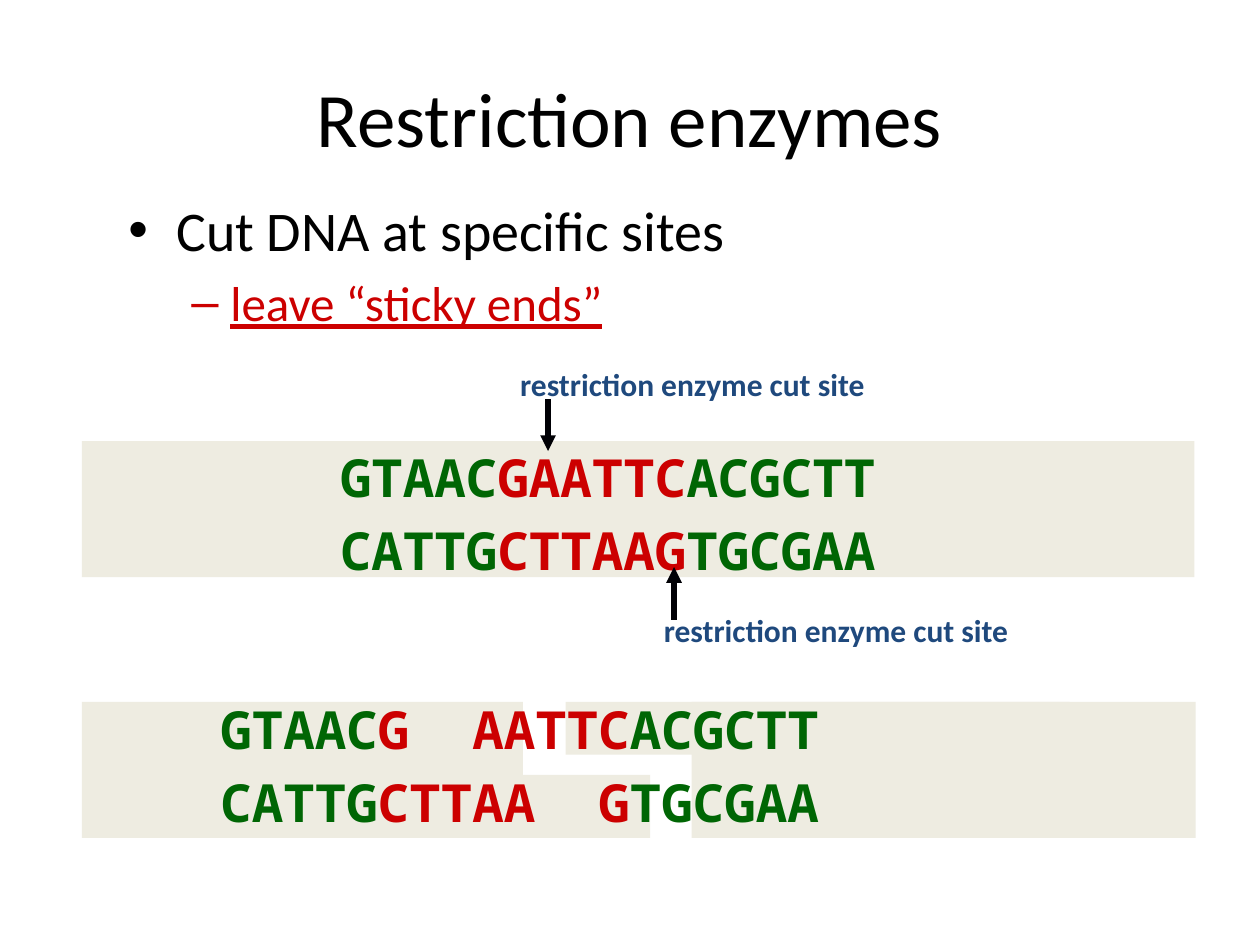
from dataclasses import dataclass

from lxml.etree import SubElement
from pptx import Presentation
from pptx.dml.color import RGBColor
from pptx.enum.shapes import MSO_CONNECTOR as Connector, MSO_SHAPE as Shape
from pptx.enum.text import MSO_ANCHOR as Anchor, PP_ALIGN as Align
from pptx.oxml.ns import qn
from pptx.util import Inches, Pt


@dataclass(frozen=True)
class Theme:
    text_font: str = "Calibri"
    sequence_font: str = "Noto Sans Mono"
    black: str = "000000"
    arrow: str = "000005"
    red: str = "CC0000"
    green: str = "006604"
    blue: str = "1F497D"
    band: str = "EEECE1"
    title_size: int = 44
    body_size: int = 32
    sub_size: int = 28
    sequence_size: int = 30
    label_size: int = 18


THEME = Theme()


def color(value):
    return RGBColor.from_string(value)


def set_font(paragraph, size, name=THEME.text_font, fill=None, bold=False):
    font = paragraph.font
    font.size, font.name, font.bold = Pt(size), name, bold
    if fill:
        font.color.rgb = color(fill)


def add_text_frame(shapes, box, anchor=Anchor.MIDDLE):
    shape = shapes.add_textbox(*map(Inches, box))
    frame = shape.text_frame
    frame.word_wrap = True
    frame.vertical_anchor = anchor
    return frame


def add_title(shapes, text):
    paragraph = add_text_frame(shapes, (0.5, 0.3, 9, 1.25)).paragraphs[0]
    paragraph.text = text
    paragraph.alignment = Align.CENTER
    set_font(paragraph, THEME.title_size, fill=THEME.black)


def format_bullet(paragraph, level, mark, margin, hanging, size, fill):
    paragraph.level = level
    paragraph.space_before = Pt(size * 0.2)
    properties = paragraph._p.get_or_add_pPr()
    properties.set("marL", str(Inches(margin)))
    properties.set("indent", str(-Inches(hanging)))
    bullet_color = SubElement(properties, qn("a:buClr"))
    SubElement(bullet_color, qn("a:srgbClr"), val=fill)
    SubElement(properties, qn("a:buFont"), typeface="Arial")
    SubElement(properties, qn("a:buChar"), char=mark)
    set_font(paragraph, size, fill=fill)


def add_body(shapes, point, detail):
    frame = add_text_frame(shapes, (0.92, 1.5, 8.5, 1.55), Anchor.TOP)
    first, second = frame.paragraphs[0], frame.add_paragraph()
    first.text, second.text = point, detail
    format_bullet(first, 0, "•", 0.38, 0.38, THEME.body_size, THEME.black)
    format_bullet(second, 1, "–", 0.81, 0.31, THEME.sub_size, THEME.red)
    second.font.underline = True


def add_band(shapes, box):
    band = shapes.add_shape(Shape.RECTANGLE, *map(Inches, box))
    band.shadow.inherit = False
    band.fill.solid()
    band.fill.fore_color.rgb = color(THEME.band)
    band.line.fill.background()


def add_strands(shapes, box, strands, tab_stops=()):
    frame = add_text_frame(shapes, box)
    for index, parts in enumerate(strands):
        paragraph = frame.add_paragraph() if index else frame.paragraphs[0]
        paragraph.space_after = Pt(0 if index else 6)
        if tab_stops:
            tabs = SubElement(paragraph._p.get_or_add_pPr(), qn("a:tabLst"))
            for stop in tab_stops:
                SubElement(tabs, qn("a:tab"), pos=str(Inches(stop)), algn="l")
        set_font(paragraph, THEME.sequence_size, THEME.sequence_font, bold=True)
        for text, fill in zip(parts, (THEME.green, THEME.red, THEME.green)):
            run = paragraph.add_run()
            run.text = text
            run.font.color.rgb = color(fill)


def add_arrow(shapes, x, start, end):
    arrow = shapes.add_connector(
        Connector.STRAIGHT, Inches(x), Inches(start), Inches(x), Inches(end)
    )
    arrow.line.width = Pt(3)
    arrow.line.color.rgb = color(THEME.arrow)
    properties = arrow._element.spPr
    SubElement(properties.find(qn("a:ln")), qn("a:tailEnd"), type="triangle")
    SubElement(properties, qn("a:effectLst"))


def add_label(shapes, left, top, text):
    paragraph = add_text_frame(shapes, (left, top, 3.36, 0.37)).paragraphs[0]
    paragraph.text = text
    paragraph.line_spacing = 0.9
    set_font(paragraph, THEME.label_size, fill=THEME.blue, bold=True)


def add_cut_dna(shapes):
    for box in (
        (4.49, 5.57, 4, 0.42),
        (1.74, 6.15, 3.42, 0.5),
        (5.49, 5.57, 4, 1.08),
        (0.65, 5.57, 3.5, 1.08),
    ):
        add_band(shapes, box)
    strands = (("GTAAC", "G\tAATTC", "ACGCTT"), ("CATTG", "CTTAA\tG", "TGCGAA"))
    add_strands(shapes, (1.65, 5.48, 6.58, 1.18), strands, tab_stops=(2, 3))


def add_whole_dna(shapes):
    add_band(shapes, (0.65, 3.5, 8.83, 1.08))
    strands = (("GTAAC", "GAATTC", "ACGCTT"), ("CATTG", "CTTAAG", "TGCGAA"))
    add_strands(shapes, (2.6, 3.48, 4.68, 1.18), strands)
    add_arrow(shapes, 4.35, 3.17, 3.58)
    add_arrow(shapes, 5.35, 4.92, 4.5)


def main():
    presentation = Presentation()
    presentation.slide_width, presentation.slide_height = Inches(10), Inches(7.5)
    slide = presentation.slides.add_slide(presentation.slide_layouts[6])
    shapes = slide.shapes
    add_title(shapes, "Restriction enzymes")
    add_body(shapes, "Cut DNA at specific sites", "leave “sticky ends”")
    add_cut_dna(shapes.add_group_shape().shapes)
    add_whole_dna(shapes.add_group_shape().shapes)
    for left, top in ((4.03, 2.88), (5.17, 4.83)):
        add_label(shapes, left, top, "restriction enzyme cut site")
    presentation.save("out.pptx")


if __name__ == "__main__":
    main()
